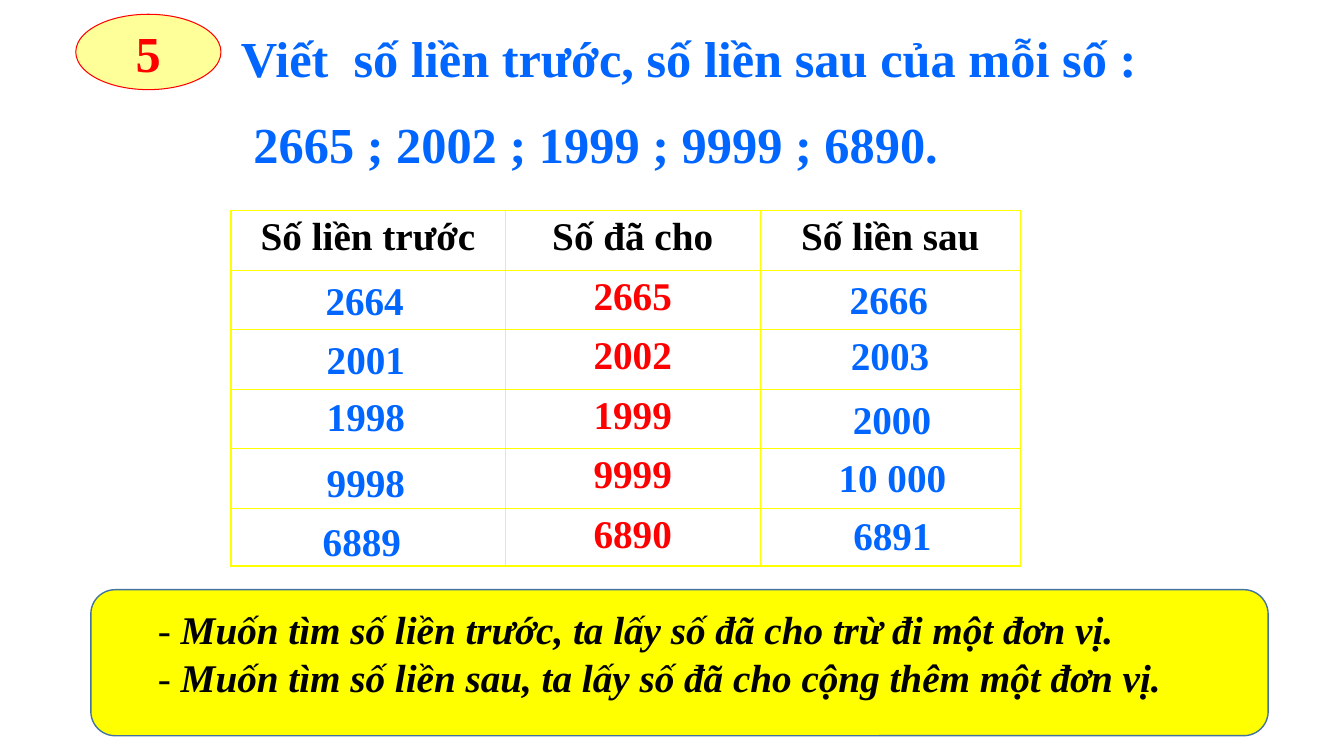
from dataclasses import dataclass

import pptx
import pptx.dml.color
import pptx.enum.shapes
import pptx.enum.text
import pptx.oxml
import pptx.oxml.ns
import pptx.util

Cm = pptx.util.Cm
Pt = pptx.util.Pt
ALIGN = pptx.enum.text.PP_ALIGN
SHAPE = pptx.enum.shapes.MSO_SHAPE
COLORS = {"blue": "0066FF", "red": "FF0000", "black": "000000",
          "cream": "FFFF99", "yellow": "FFFF00", "navy": "43739E"}
FONT = "Times New Roman"


@dataclass
class Box:
    left: float
    top: float
    width: float
    height: float

    def place(self) -> tuple:
        return Cm(self.left), Cm(self.top), Cm(self.width), Cm(self.height)


@dataclass
class Answer:
    text: str
    mid: float
    top: float


ANSWERS = [
    Answer("2664", 9.19, 6.83), Answer("2666", 22.4, 6.81),
    Answer("2001", 9.22, 8.33), Answer("2003", 22.43, 8.23),
    Answer("1998", 9.22, 9.75), Answer("2000", 22.48, 9.83),
    Answer("9998", 9.22, 11.43), Answer("10 000", 22.49, 11.3),
    Answer("6889", 9.12, 12.9), Answer("6891", 22.49, 12.75),
]
HEADS = ["Số liền trước", "Số đã cho", "Số liền sau"]
GIVEN = ["2665", "2002", "1999", "9999", "6890"]
RULES = ["Muốn tìm số liền trước, ta lấy số đã cho trừ đi một đơn vị.",
         "Muốn tìm số liền sau, ta lấy số đã cho cộng thêm một đơn vị."]


def rgb(name: str) -> pptx.dml.color.RGBColor:
    return pptx.dml.color.RGBColor.from_string(COLORS[name])


def style(run, size: float, color: str, bold: bool = True) -> None:
    run.font.name = FONT
    run.font.size = Pt(size)
    run.font.bold = bold
    run.font.color.rgb = rgb(color)


def write(frame, text: str, size: float, color: str,
          align=ALIGN.CENTER, gap: float = 0) -> None:
    frame.text = text
    for para in frame.paragraphs:
        para.alignment = align
        para.space_before = Pt(gap)
        for run in para.runs:
            style(run, size, color)


def add_text(slide, box: Box):
    frame = slide.shapes.add_textbox(*box.place()).text_frame
    frame.word_wrap = True
    return frame


def add_shape(slide, kind, box: Box, fill: str, line: str, width: float):
    shape = slide.shapes.add_shape(kind, *box.place())
    shape.shadow.inherit = False
    shape.fill.solid()
    shape.fill.fore_color.rgb = rgb(fill)
    shape.line.color.rgb = rgb(line)
    shape.line.width = Pt(width)
    return shape


def edge(cell, color: str) -> None:
    """Draw a 1 pt border on all four sides, before any fill is set."""
    props = cell._tc.get_or_add_tcPr()
    for side in ("lnL", "lnR", "lnT", "lnB"):
        props.append(pptx.oxml.parse_xml(
            f'<a:{side} {pptx.oxml.ns.nsdecls("a")} w="12700"><a:solidFill>'
            f'<a:srgbClr val="{COLORS[color]}"/></a:solidFill></a:{side}>'))


def add_grid(slide) -> None:
    widths = [6.91, 6.43, 6.55]
    heights = [1.5] * 5 + [1.45]
    box = Box(5.82, 5.31, sum(widths), sum(heights))
    table = slide.shapes.add_table(
        len(heights), len(widths), *box.place()).table
    table.first_row = table.horz_banding = False
    for col, width in zip(table.columns, widths):
        col.width = Cm(width)
    for row, height in zip(table.rows, heights):
        row.height = Cm(height)
    for cell in table.iter_cells():
        edge(cell, "yellow")
        cell.fill.background()
    for col, head in enumerate(HEADS):
        write(table.cell(0, col).text_frame, head, 28, "black")
    for row, number in enumerate(GIVEN, 1):
        write(table.cell(row, 1).text_frame, number, 28, "red")


def add_title(slide) -> None:
    badge = add_shape(slide, SHAPE.OVAL, Box(1.91, 0.36, 3.66, 1.9),
                      "cream", "red", 0.75)
    badge.text_frame.vertical_anchor = pptx.enum.text.MSO_ANCHOR.MIDDLE
    badge.text_frame.word_wrap = False
    write(badge.text_frame, "5", 36, "red")
    write(add_text(slide, Box(5.82, 0.56, 23.72, 4.11)),
          "Viết  số liền trước, số liền sau của mỗi số :\n"
          " 2665 ; 2002 ; 1999 ; 9999 ; 6890.",
          36, "blue", ALIGN.LEFT, 18)


def add_rules(slide) -> None:
    panel = Box(2.29, 14.86, 29.67, 3.68)
    add_shape(slide, SHAPE.ROUNDED_RECTANGLE, panel, "yellow", "navy", 1)
    frame = add_text(slide, Box(3.73, 15.14, 28.47, 3.43))
    frame.text = "\n".join("- " for _ in RULES)
    for para, rule in zip(frame.paragraphs, RULES):
        style(para.runs[0], 28, "black", False)
        run = para.add_run()
        run.text = rule
        style(run, 28, "black")
        run.font.italic = True


def main() -> None:
    deck = pptx.Presentation()
    deck.slide_width, deck.slide_height = Cm(33.87), Cm(19.05)
    slide = deck.slides.add_slide(deck.slide_layouts[6])
    add_title(slide)
    add_grid(slide)
    for answer in ANSWERS:
        width = 3.4 if " " in answer.text else 2.74
        box = Box(answer.mid - width / 2, answer.top, width, 1.45)
        write(add_text(slide, box), answer.text, 28, "blue", gap=14)
    add_rules(slide)
    deck.save("out.pptx")


if __name__ == "__main__":
    main()
